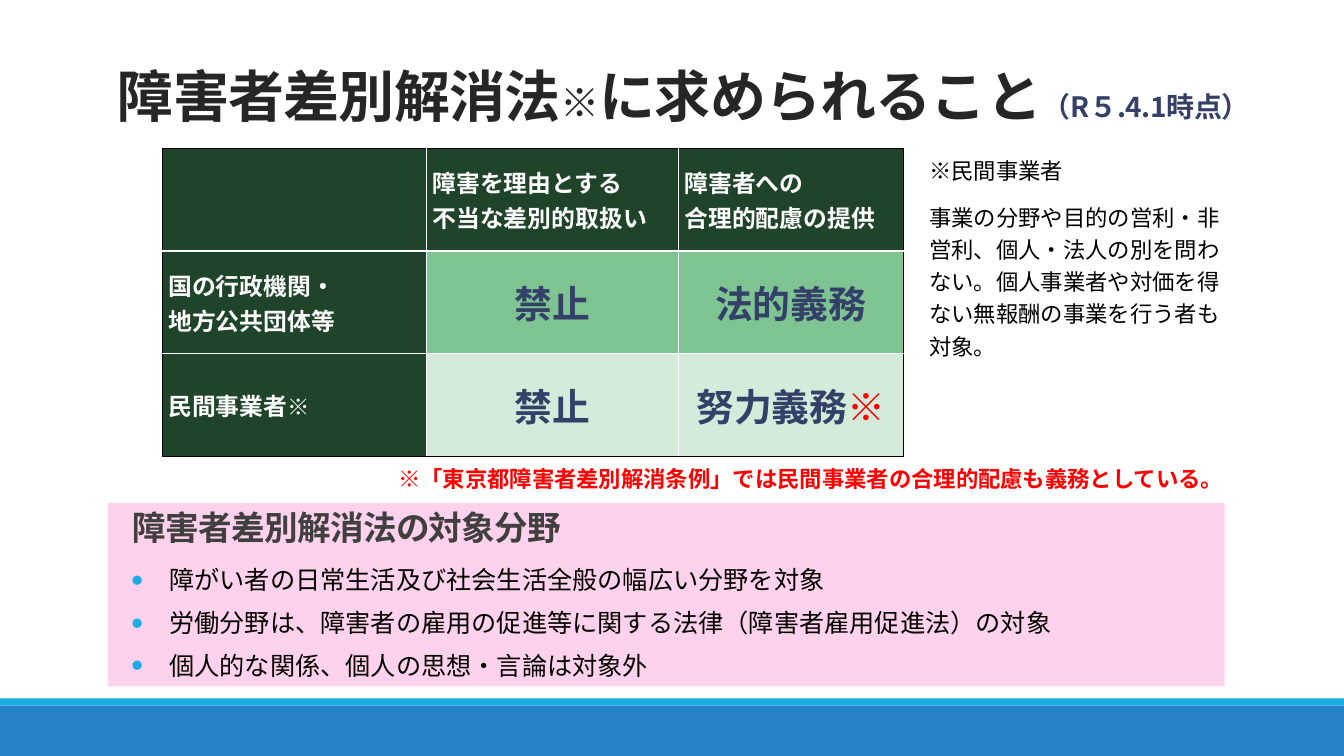
from lxml import etree
from pptx import Presentation
from pptx.dml.color import RGBColor
from pptx.enum.shapes import MSO_SHAPE
from pptx.enum.text import MSO_ANCHOR, MSO_AUTO_SIZE, PP_ALIGN
from pptx.oxml.ns import qn
from pptx.util import Inches, Pt

RECTANGLE = MSO_SHAPE.RECTANGLE
TOP, MIDDLE, BOTTOM = MSO_ANCHOR.TOP, MSO_ANCHOR.MIDDLE, MSO_ANCHOR.BOTTOM
LEFT, CENTER = PP_ALIGN.LEFT, PP_ALIGN.CENTER
NO_FIT = MSO_AUTO_SIZE.NONE

GOTHIC, CALIBRI = "Noto Sans CJK JP", "Calibri"
WHITE, BLACK, RED, NAVY = "FFFFFF", "000000", "FF0000", "344068"
INK, GREY, CYAN, BLUE, PINK = "262626", "404040", "1CADE4", "2683C6", "FED2EC"
DARK_GREEN, MID_GREEN, PALE_GREEN = "1F442A", "7EC492", "D4EBDB"
TITLE_ONLY = 5
COLUMNS, ROWS = 133.33, 75  # grid of tenths of an inch


def colour(value):
    return RGBColor.from_string(value)


class SlideBuilder:
    def __init__(self, deck):
        self.unit = deck.slide_height / ROWS
        self.page = deck.slides.add_slide(deck.slide_layouts[TITLE_ONLY])

    def grid(self, *lengths):
        return [round(length * self.unit) for length in lengths]

    def add_spans(self, para, spans, font=GOTHIC, bold=False, tight=False,
                  align=LEFT, line=None, before=0):
        """Add spans of (text, size, colour) to a paragraph."""
        para.alignment = align
        para.space_before = Pt(before)
        if line:
            para.line_spacing = line
        for text, size, tint in spans:
            span = para.add_run()
            span.text = text
            span.font.size = Pt(size)
            span.font.bold = bold
            span.font.name = font
            span.font.color.rgb = colour(tint)
            props = span._r.get_or_add_rPr()
            etree.SubElement(props, qn("a:ea"), typeface=font)
            if tight:
                props.set("spc", "-50")

    def bullet(self, para):
        props = para._p.get_or_add_pPr()
        indent = Inches(0.38)
        props.set("marL", str(indent))
        props.set("indent", str(-indent))
        tint = etree.SubElement(props, qn("a:buClr"))
        etree.SubElement(tint, qn("a:srgbClr"), val=CYAN)
        etree.SubElement(props, qn("a:buSzPct"), val="80000")
        etree.SubElement(props, qn("a:buFont"), typeface=CALIBRI)
        etree.SubElement(props, qn("a:buChar"), char="●")

    def fill_frame(self, frame, paragraphs, anchor=TOP, inset=(0.8, 0.4),
                   bullets=False, **style):
        frame.word_wrap = True
        frame.auto_size = NO_FIT
        frame.vertical_anchor = anchor
        side, edge = self.grid(*inset)
        frame.margin_left = frame.margin_right = side
        frame.margin_top = frame.margin_bottom = edge
        for index, spans in enumerate(paragraphs):
            para = frame.add_paragraph() if index else frame.paragraphs[0]
            self.add_spans(para, spans, **style)
            if bullets:
                self.bullet(para)

    def title(self, place, spans, **style):
        box = self.page.shapes.title
        box.left, box.top, box.width, box.height = self.grid(*place)
        self.fill_frame(box.text_frame, [spans], **style)

    def panel(self, place, fill):
        box = self.page.shapes.add_shape(RECTANGLE, *self.grid(*place))
        box.shadow.inherit = False
        box.fill.solid()
        box.fill.fore_color.rgb = colour(fill)
        box.line.fill.background()
        return box

    def text(self, place, paragraphs, **style):
        box = self.page.shapes.add_textbox(*self.grid(*place))
        self.fill_frame(box.text_frame, paragraphs, **style)

    def border(self, cell, tints):
        props = cell._tc.get_or_add_tcPr()
        for index, (side, tint) in enumerate(zip("LRTB", tints)):
            edge = etree.Element(qn(f"a:ln{side}"), w=str(Pt(1)))
            paint = etree.SubElement(edge, qn("a:solidFill"))
            etree.SubElement(paint, qn("a:srgbClr"), val=tint)
            props.insert(index, edge)

    def table(self, place, widths, cells):
        """Draw rows of (fill, alignment, paragraphs) with a black outer frame."""
        last_row, last_column = len(cells) - 1, len(widths) - 1
        frame = self.page.shapes.add_table(len(cells), len(widths), *self.grid(*place))
        table = frame.table
        table.first_row = table.horz_banding = False
        for column, width in zip(table.columns, self.grid(*widths)):
            column.width = width
        for r, row in enumerate(cells):
            for c, (fill, align, paragraphs) in enumerate(row):
                cell = table.cell(r, c)
                cell.fill.solid()
                cell.fill.fore_color.rgb = colour(fill)
                cell.vertical_anchor = MIDDLE
                cell.margin_left = cell.margin_right = Inches(0.06)
                cell.margin_top = cell.margin_bottom = 0
                for index, spans in enumerate(paragraphs):
                    lines = cell.text_frame
                    para = lines.add_paragraph() if index else lines.paragraphs[0]
                    self.add_spans(para, spans, bold=True, align=align)
                outer = (c == 0, c == last_column, r == 0, r == last_row)
                self.border(cell, [BLACK if edge else WHITE for edge in outer])


def heading(*lines):
    return DARK_GREEN, LEFT, [[(line, 17, WHITE)] for line in lines]


def duty(fill, text, mark=""):
    spans = [(text, 27, NAVY)] + ([(mark, 27, RED)] if mark else [])
    return fill, CENTER, [spans]


def main():
    deck = Presentation()
    deck.slide_width, deck.slide_height = Inches(COLUMNS / 10), Inches(ROWS / 10)
    slide = SlideBuilder(deck)

    # Footer bands and the pink panel
    slide.panel((0, 70, COLUMNS, 5), BLUE)
    slide.panel((0, 69.3, COLUMNS, 0.7), CYAN)
    slide.panel((10.7, 49.9, 110.8, 18.2), PINK)

    # Title
    slide.title((10.7, 2.8, 117.2, 10.5), [
        ("障害者差別解消法", 40, INK), ("※", 28, INK),
        ("に求められること", 40, INK), ("（R５.4.1時点）", 20, NAVY),
    ], anchor=BOTTOM, inset=(1, 0.5), bold=True, tight=True, line=0.85)

    # Duties by type of body
    private_body = (DARK_GREEN, LEFT, [[("民間事業者", 17, WHITE), ("※", 16, WHITE)]])
    slide.table((16.1, 14.7, 73.5, 30.6), (26.2, 25, 22.3), [
        [heading(), heading("障害を理由とする", "不当な差別的取扱い"),
         heading("障害者への", "合理的配慮の提供")],
        [heading("国の行政機関・", "地方公共団体等"),
         duty(MID_GREEN, "禁止"), duty(MID_GREEN, "法的義務")],
        [private_body, duty(PALE_GREEN, "禁止"), duty(PALE_GREEN, "努力義務", "※")],
    ])

    # Side note on private businesses
    note = slide.panel((91.4, 14.7, 32, 22.4), WHITE)
    slide.fill_frame(note.text_frame, [
        [("※民間事業者", 16, BLACK)],
        [("事業の分野や目的の営利・非営利、個人・法人の別を問わない。"
          "個人事業者や対価を得ない無報酬の事業を行う者も対象。", 16, BLACK)],
    ], font=CALIBRI, line=1.2, before=10)

    # Fields covered by the law
    fields = ("障がい者の日常生活及び社会生活全般の幅広い分野を対象",
              "労働分野は、障害者の雇用の促進等に関する法律（障害者雇用促進法）の対象",
              "個人的な関係、個人の思想・言論は対象外")
    slide.text((12.2, 54.1, 96.5, 14.7), [[(field, 18, BLACK)] for field in fields],
               anchor=MIDDLE, bullets=True, line=1.2, before=4.5)
    slide.text((12.2, 44.3, 107.8, 10.5), [[("障害者差別解消法の対象分野", 24, GREY)]],
               anchor=BOTTOM, inset=(1, 0.5), bold=True, tight=True, line=0.85)

    # Red remark under the table
    remark = "※「東京都障害者差別解消条例」では民間事業者の合理的配慮も義務としている。"
    slide.text((38.7, 45.2, 94, 4.6), [[(remark, 16, RED)]],
               font=CALIBRI, bold=True, line=1.2, before=10)

    deck.save("out.pptx")


if __name__ == "__main__":
    main()
